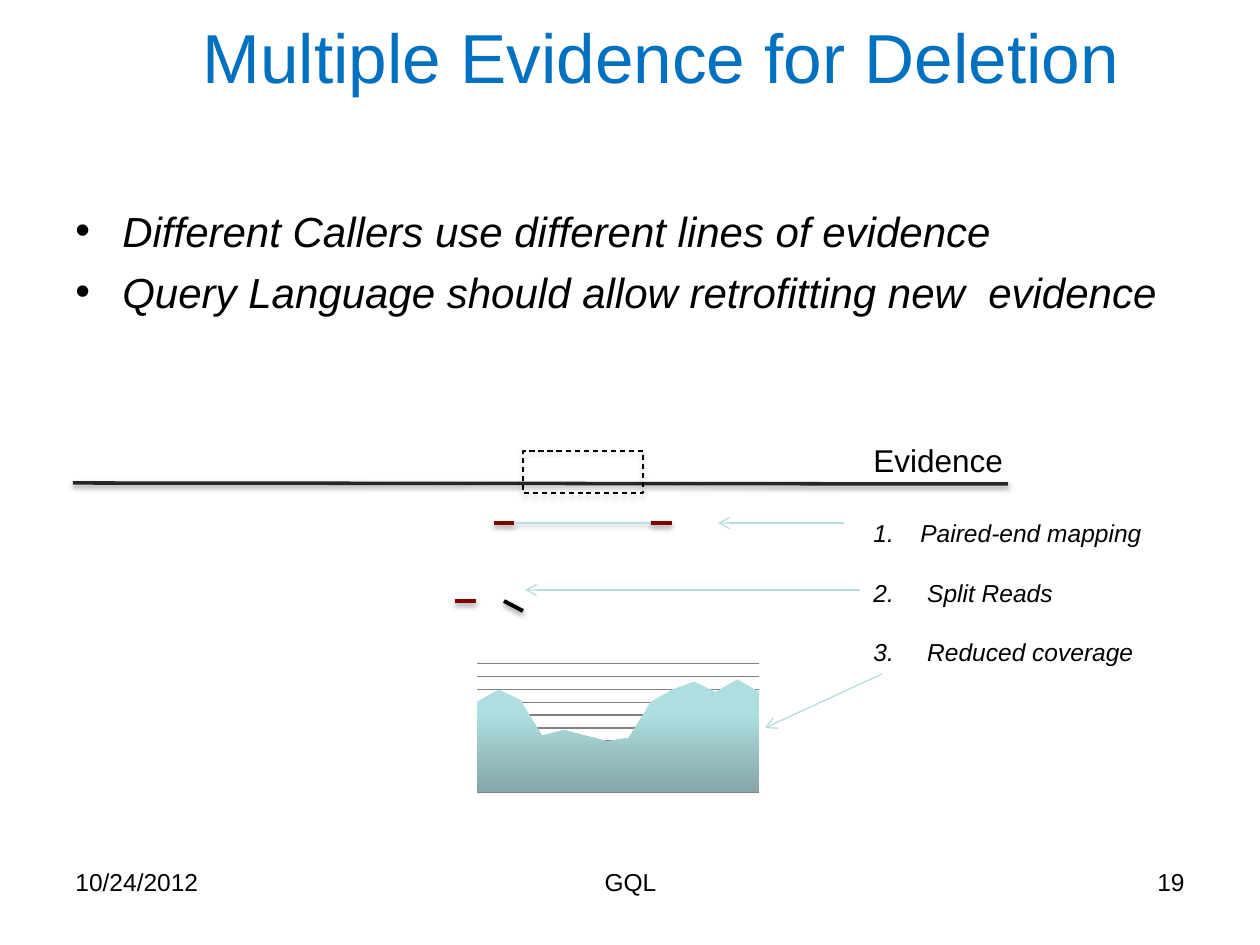
from dataclasses import dataclass

from lxml.etree import SubElement
from pptx import Presentation
from pptx.chart.data import CategoryChartData
from pptx.dml.color import RGBColor
from pptx.enum.chart import XL_CHART_TYPE
from pptx.enum.dml import MSO_LINE
from pptx.enum.shapes import MSO_CONNECTOR, MSO_SHAPE
from pptx.enum.text import MSO_ANCHOR, PP_ALIGN
from pptx.oxml import parse_xml
from pptx.oxml.ns import nsdecls, qn
from pptx.util import Emu, Pt

PIXEL = 914400 / 126


@dataclass(frozen=True)
class Theme:
    font: str = "Arial"
    title: str = "0070C0"
    ink: str = "000000"
    genome: str = "262626"
    read: str = "800000"
    insert: str = "BBE0E3"
    arrow: str = "B6DCDF"
    area_top: str = "AEDEE0"
    area_bottom: str = "86A6A8"
    grid: str = "808080"
    title_size: float = 39.6
    body_size: int = 24
    heading_size: int = 18
    small_size: int = 14
    chart_size: int = 10


def px(length):
    return Emu(round(length * PIXEL))


def color(value):
    return RGBColor.from_string(value)


def set_all(target, values):
    for name, value in values.items():
        setattr(target, name, value)


class SlideBuilder:
    def __init__(self, slide, theme):
        self.slide = slide
        self.theme = theme

    def place(self, shape, box):
        set_all(shape, dict(zip(("left", "top", "width", "height"), map(px, box))))

    def add_text(self, paragraph, text, size, ink=None, italic=False, **layout):
        run = paragraph.add_run()
        run.text = text
        set_all(run.font, {"name": self.theme.font, "size": Pt(size), "italic": italic})
        run.font.color.rgb = color(ink or self.theme.ink)
        set_all(paragraph, layout)

    def title(self, text, box):
        shape = self.slide.shapes.title
        self.place(shape, box)
        shape.text_frame.vertical_anchor = MSO_ANCHOR.MIDDLE
        self.add_text(shape.text_frame.paragraphs[0], text, self.theme.title_size,
                      self.theme.title, alignment=PP_ALIGN.CENTER)

    def text_box(self, box, wrap=True):
        frame = self.slide.shapes.add_textbox(*map(px, box)).text_frame
        frame.word_wrap = wrap
        return frame

    def label(self, text, box, size, alignment=PP_ALIGN.LEFT):
        frame = self.text_box(box)
        self.add_text(frame.paragraphs[0], text, size, alignment=alignment)

    def list_item(self, paragraph, text, size, space, marker, **attributes):
        self.add_text(paragraph, text, size, italic=True, space_before=Pt(space))
        properties = paragraph._p.get_or_add_pPr()
        hanging = {"marL": str(px(47)), "indent": str(-px(47))}
        for name, value in hanging.items():
            properties.set(name, value)
        SubElement(properties, qn("a:buFont"), typeface=self.theme.font)
        SubElement(properties, qn(marker), **attributes)

    def effects(self, shape, shadow=None):
        effect_list = SubElement(shape._element.spPr, qn("a:effectLst"))
        if shadow:
            alpha, distance = shadow
            effect_list.append(parse_xml(
                f'<a:outerShdw {nsdecls("a")} blurRad="{Pt(3.1)}" dist="{Pt(distance)}" '
                f'dir="5400000" rotWithShape="0"><a:srgbClr val="{self.theme.ink}">'
                f'<a:alpha val="{alpha * 1000}"/></a:srgbClr></a:outerShdw>'))

    def line(self, start, end, ink, width, arrow=False, shapes=None):
        shapes = shapes or self.slide.shapes
        connector = shapes.add_connector(MSO_CONNECTOR.STRAIGHT, *map(px, start + end))
        connector.line.color.rgb = color(ink)
        connector.line.width = Pt(width)
        if arrow:
            SubElement(connector.line._get_or_add_ln(), qn("a:tailEnd"), type="arrow")
        self.effects(connector, None if arrow else (38, 1.6))

    def dashed_box(self, box):
        shape = self.slide.shapes.add_shape(MSO_SHAPE.RECTANGLE, *map(px, box))
        shape.fill.background()
        shape.line.color.rgb = color(self.theme.ink)
        set_all(shape.line, {"width": Pt(0.75), "dash_style": MSO_LINE.DASH})
        self.effects(shape, (35, 1.8))

    def area_chart(self, values, box):
        data = CategoryChartData()
        data.categories = [str(number) for number in range(1, len(values) + 1)]
        data.add_series("Series 1", values)
        chart = self.slide.shapes.add_chart(
            XL_CHART_TYPE.AREA, *map(px, box), data).chart
        set_all(chart, {"has_legend": False, "has_title": False})
        set_all(chart.font, {"name": self.theme.font, "size": Pt(self.theme.chart_size)})
        chart.font.color.rgb = color(self.theme.ink)
        chart.plots[0].vary_by_categories = False

        fill = chart.plots[0].series[0].format.fill
        fill.gradient()
        fill.gradient_angle = 270
        stops = ((0.3, self.theme.area_top), (1, self.theme.area_bottom))
        for stop, (position, ink) in zip(fill.gradient_stops, stops):
            stop.position = position
            stop.color.rgb = color(ink)

        set_all(chart.value_axis, {"minimum_scale": 0, "maximum_scale": 114,
                                   "major_unit": 11.4, "has_major_gridlines": True})
        grid = chart.value_axis.major_gridlines.format.line
        grid.color.rgb = color(self.theme.grid)
        grid.width = Pt(0.75)
        set_all(chart.category_axis, {"has_major_gridlines": False, "visible": False})
        chart.value_axis.visible = False

        # Plot fills nearly the whole chart frame
        plot_area = chart._chartSpace.chart.plotArea
        for old in plot_area.findall(qn("c:layout")):
            plot_area.remove(old)
        layout = parse_xml(f'<c:layout {nsdecls("c")}><c:manualLayout/></c:layout>')
        settings = {"layoutTarget": "inner", "xMode": "edge", "yMode": "edge",
                    "x": "0.02", "y": "0.02", "w": "0.96", "h": "0.96"}
        for name, value in settings.items():
            SubElement(layout[0], qn(f"c:{name}"), val=value)
        plot_area.insert(0, layout)


def main():
    theme = Theme()
    presentation = Presentation()
    set_all(presentation, {"slide_width": px(1260), "slide_height": px(945)})
    slide = presentation.slides.add_slide(presentation.slide_layouts[5])
    builder = SlideBuilder(slide, theme)

    # Title and main points
    builder.title("Multiple Evidence for Deletion", (157, 10, 1008, 92))
    points = ("Different Callers use different lines of evidence",
              "Query Language should allow retrofitting new  evidence")
    frame = builder.text_box((63, 199, 1134, 179))
    for index, point in enumerate(points):
        paragraph = frame.add_paragraph() if index else frame.paragraphs[0]
        builder.list_item(paragraph, point, theme.body_size, 6, "a:buChar", char="•")

    # Footer
    builder.label("10/24/2012", (63, 861, 294, 65), theme.small_size)
    builder.label("19", (903, 861, 294, 65), theme.small_size, PP_ALIGN.RIGHT)
    builder.label("GQL", (431, 861, 399, 65), theme.small_size, PP_ALIGN.CENTER)

    # Genome with the deleted region
    builder.line((73, 483), (1008, 484), theme.genome, 2)
    builder.dashed_box((523, 451, 120, 42))

    # Evidence list
    frame = builder.text_box((861, 435, 295, 310), wrap=False)
    builder.add_text(frame.paragraphs[0], "Evidence", theme.heading_size)
    evidence = ("Paired-end mapping", " Split Reads", " Reduced coverage")
    for index, text in enumerate(evidence):
        builder.list_item(frame.add_paragraph(), text, theme.small_size,
                          17 if index else 22.5, "a:buAutoNum", type="arabicPeriod")

    # Paired-end read
    pair = slide.shapes.add_group_shape().shapes
    for left, right, ink, width in ((494, 514, theme.read, 2.25),
                                    (651, 672, theme.read, 2.25),
                                    (514, 651, theme.insert, 0.75)):
        builder.line((left, 523), (right, 523), ink, width, shapes=pair)

    # Coverage
    builder.area_chart((80, 91, 82, 50, 55, 50, 45, 48, 80, 91, 98, 89, 100, 89),
                       (471, 661, 294, 134))

    # Split read
    builder.line((504, 601), (523, 611), theme.ink, 2.25)
    builder.line((455, 601), (476, 601), theme.read, 2.25)

    # Arrows from the list to each kind of evidence
    for start, end in (((844, 523), (718, 523)),
                       ((860, 590), (525, 590)),
                       ((882, 674), (765, 728))):
        builder.line(start, end, theme.arrow, 0.75, arrow=True)

    presentation.save("out.pptx")


if __name__ == "__main__":
    main()
